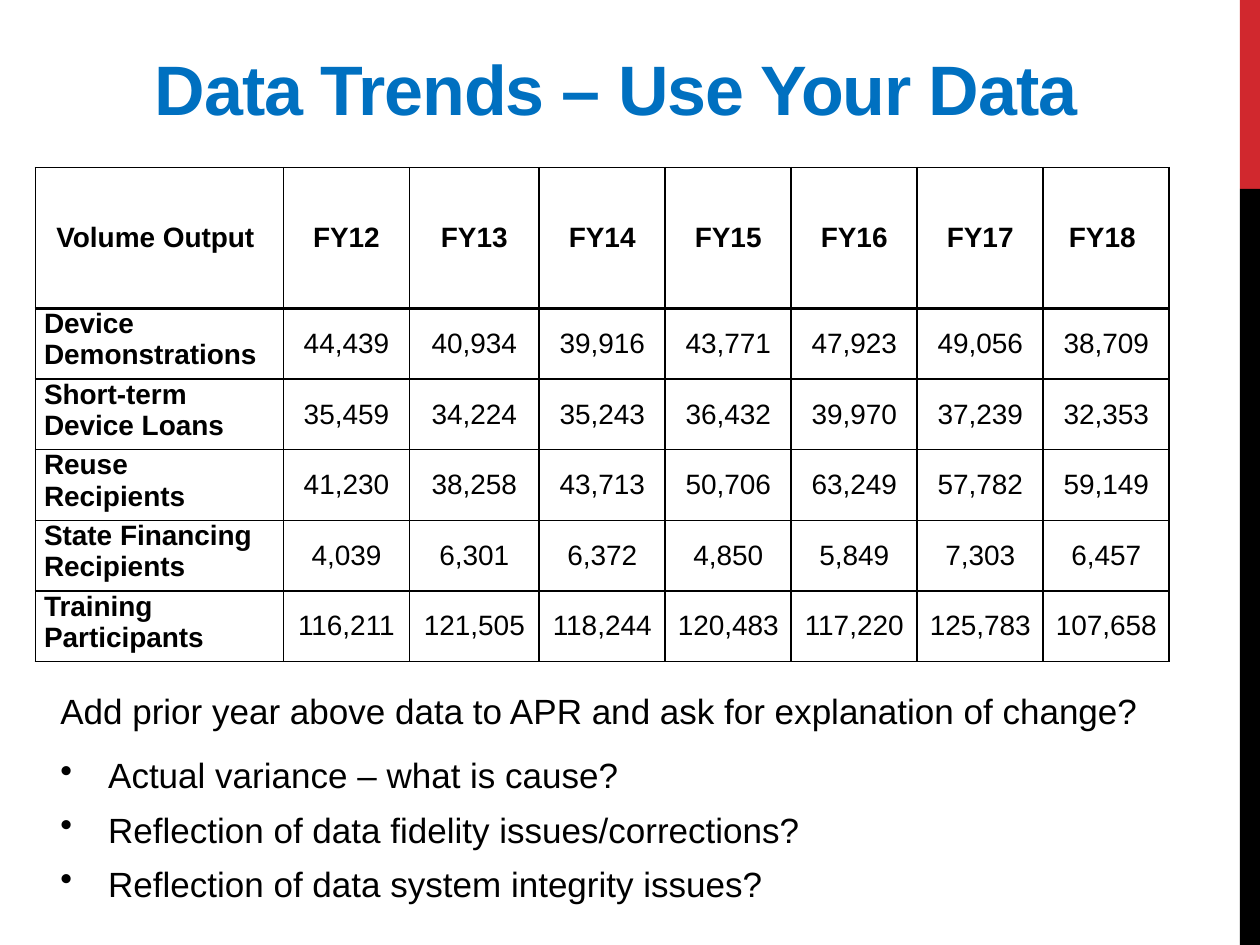
"""Build the data trends slide: yearly volume table above follow-up questions."""
from lxml.etree import SubElement
from pptx import Presentation
from pptx.dml.color import RGBColor
from pptx.enum.shapes import MSO_SHAPE
from pptx.enum.text import MSO_ANCHOR, PP_ALIGN
from pptx.oxml.ns import qn
from pptx.util import Inches, Pt

TITLE = "Data Trends – Use Your Data"
HEADINGS = ["Volume Output ", "FY12", "FY13", "FY14", "FY15", "FY16", "FY17", "FY18 "]
VOLUMES = [
    ["Device Demonstrations", "44,439", "40,934", "39,916", "43,771", "47,923", "49,056", "38,709"],
    ["Short-term Device Loans", "35,459", "34,224", "35,243", "36,432", "39,970", "37,239", "32,353"],
    ["Reuse Recipients", "41,230", "38,258", "43,713", "50,706", "63,249", "57,782", "59,149"],
    ["State Financing Recipients", "4,039", "6,301", "6,372", "4,850", "5,849", "7,303", "6,457"],
    ["Training Participants", "116,211", "121,505", "118,244", "120,483", "117,220", "125,783", "107,658"],
]
PROMPT = "Add prior year above data to APR and ask for explanation of change?"
QUESTIONS = [
    "Actual variance – what is cause?",
    "Reflection of data fidelity issues/corrections?",
    "Reflection of data system integrity issues?",
]
COLORS = {"title": "0070C0", "text": "000000", "accent": "D1282E", "band": "000000", "border": "000000"}
WIDTH, HEIGHT = 10, 7.5
BAND_WIDTH, ACCENT_SHARE = 0.16, 0.2
COLUMN_WIDTHS = [1.97, 1, 1.03, 1, 1, 1, 1, 1]
ROW_HEIGHT = 0.56
ROW_HEIGHTS = [2 * ROW_HEIGHT] + [ROW_HEIGHT] * len(VOLUMES)
HANGING = 0.38


def style(paragraph, size, color="text", bold=False):
    font = paragraph.font
    font.name, font.size, font.bold = "Arial", Pt(size), bold
    font.color.rgb = RGBColor.from_string(COLORS[color])


def add_band(slide, top, height, color):
    band = slide.shapes.add_shape(
        MSO_SHAPE.RECTANGLE, Inches(WIDTH - BAND_WIDTH), Inches(top), Inches(BAND_WIDTH), Inches(height))
    band.shadow.inherit = False
    band.fill.solid()
    band.fill.fore_color.rgb = RGBColor.from_string(COLORS[color])
    band.line.fill.background()


def add_frame(slide, left, top, width, height):
    frame = slide.shapes.add_textbox(Inches(left), Inches(top), Inches(width), Inches(height)).text_frame
    frame.word_wrap = True
    return frame


def add_title(slide):
    frame = add_frame(slide, 1.08, 0.25, 7.75, 0.83)
    frame.vertical_anchor = MSO_ANCHOR.BOTTOM
    frame.margin_right = Inches(0.23)
    heading = frame.paragraphs[0]
    heading.alignment = PP_ALIGN.CENTER
    heading.space_before, heading.space_after = Pt(6), Pt(12)
    run = heading.add_run()
    run.text = TITLE
    run.font._element.set("spc", "-60")
    style(heading, 40, "title", True)


def set_borders(cell, weights):
    properties = cell._tc.get_or_add_tcPr()
    for position, (side, weight) in enumerate(weights.items()):
        line = properties.makeelement(qn(f"a:{side}"), {"w": str(Pt(weight))})
        fill = SubElement(line, qn("a:solidFill"))
        SubElement(fill, qn("a:srgbClr"), val=COLORS["border"])
        properties.insert(position, line)


def add_volumes(slide):
    rows = [HEADINGS] + VOLUMES
    frame = slide.shapes.add_table(
        len(rows), len(HEADINGS), Inches(0.28), Inches(1.33),
        Inches(sum(COLUMN_WIDTHS)), Inches(sum(ROW_HEIGHTS)))
    table = frame.table
    table.horz_banding = False
    for column, width in zip(table.columns, COLUMN_WIDTHS):
        column.width = Inches(width)
    for r, (values, height) in enumerate(zip(rows, ROW_HEIGHTS)):
        table.rows[r].height = Inches(height)
        for c, value in enumerate(values):
            cell = table.cell(r, c)
            is_label = r > 0 and c == 0
            cell.text = value
            cell.fill.background()
            cell.margin_left = cell.margin_right = Inches(0.07)
            cell.margin_top = cell.margin_bottom = 0
            cell.vertical_anchor = MSO_ANCHOR.TOP if is_label else MSO_ANCHOR.MIDDLE
            entry = cell.text_frame.paragraphs[0]
            entry.alignment = PP_ALIGN.LEFT if is_label else PP_ALIGN.CENTER
            style(entry, 16, bold=r == 0 or c == 0)
            set_borders(cell, {"lnL": 1, "lnR": 1, "lnT": 2 if r == 1 else 1, "lnB": 2 if r == 0 else 1})


def add_questions(slide):
    frame = add_frame(slide, 0.38, 5.42, 9.25, 2)
    prompt = frame.paragraphs[0]
    prompt.text = PROMPT
    prompt.space_after = Pt(12)
    style(prompt, 20)
    for text in QUESTIONS:
        question = frame.add_paragraph()
        question.text = text
        question.space_before, question.space_after = Pt(1), Pt(6)
        style(question, 20)
        properties = question._p.get_or_add_pPr()
        properties.set("marL", str(Inches(HANGING)))
        properties.set("indent", str(-Inches(HANGING)))
        bullet = properties.makeelement(qn("a:buChar"), {"char": "•"})
        properties.find(qn("a:defRPr")).addprevious(bullet)


def main():
    deck = Presentation()
    deck.slide_width, deck.slide_height = Inches(WIDTH), Inches(HEIGHT)
    slide = deck.slides.add_slide(deck.slide_layouts[6])
    accent_height = HEIGHT * ACCENT_SHARE
    add_band(slide, 0, accent_height, "accent")
    add_band(slide, accent_height, HEIGHT - accent_height, "band")
    add_title(slide)
    add_volumes(slide)
    add_questions(slide)
    deck.save("out.pptx")


if __name__ == "__main__":
    main()
